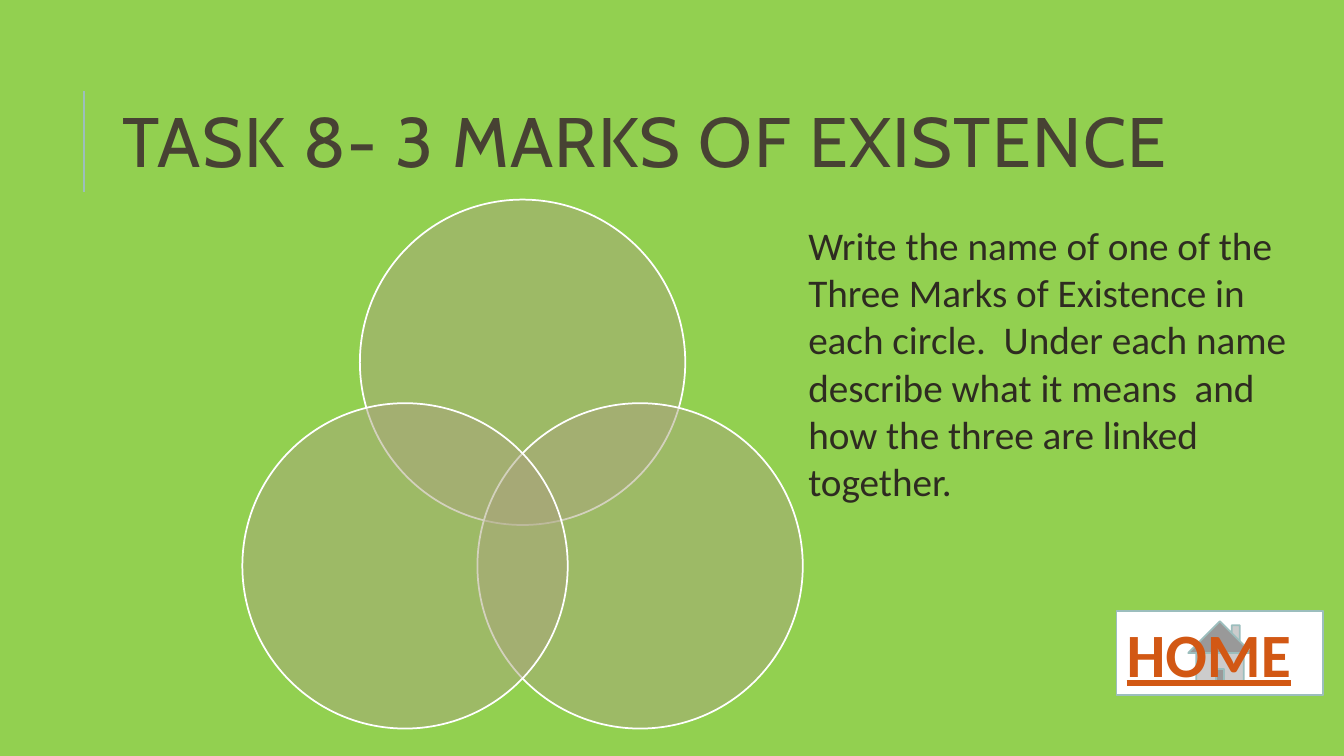
from math import cos, radians, sin

from lxml.etree import SubElement
from pptx import Presentation
from pptx.dml.color import RGBColor
from pptx.enum.shapes import MSO_CONNECTOR, MSO_SHAPE
from pptx.enum.text import MSO_ANCHOR, MSO_AUTO_SIZE, PP_ALIGN
from pptx.oxml.ns import qn
from pptx.util import Cm, Pt

TITLE = "TASK 8- 3 MARKS OF EXISTENCE"
INSTRUCTION = (
    "Write the name of one of the Three Marks of Existence in each circle.  "
    "Under each name describe what it means  and how the three are linked together."
)
HOME = "HOME"

COLOURS = {
    "background": "92D050",
    "accent": "9CBEBD",
    "button": "FFFFFF",
    "link": "D25814",
    "title": "474233",
    "body": "2E2B21",
    "circle": "A9A57C",
    "circle_edge": "FFFFFF",
}
FONTS = {
    "title": {"name": "Cabin", "size": Pt(50), "bold": False},
    "body": {"name": "Calibri", "size": Pt(28)},
    "link": {"name": "Calibri", "size": Pt(44), "bold": True, "underline": True},
}

# Boxes in centimetres: left, top, width, height
TITLE_BOX = (2.84, 1.63, 27, 4.17)
INSTRUCTION_BOX = (20.12, 5.46, 13.08, 7.44)
HOME_BOX = (28.14, 15.39, 5.21, 2.13)
RULE_X, RULE_TOP, RULE_BOTTOM = 2.11, 2.29, 4.83

# Three circles stand at equal angles around the middle of the diagram
VENN_CENTRE = (13.17, 12.55)
VENN_RING = 3.42
CIRCLE_SIZE = 8.2
CIRCLE_ANGLES = (-90, 30, 150)


def rgb(role):
    return RGBColor.from_string(COLOURS[role])


def lengths(box):
    return [Cm(value) for value in box]


def write(frame, text, role):
    """Fill a text frame with one left-aligned run in the role's font and colour."""
    frame.word_wrap = True
    paragraph = frame.paragraphs[0]
    paragraph.alignment = PP_ALIGN.LEFT
    run = paragraph.add_run()
    run.text = text
    for attribute, value in FONTS[role].items():
        setattr(run.font, attribute, value)
    run.font.color.rgb = rgb(role)
    return run


def add_filled(slide, preset, box, fill, edge):
    shape = slide.shapes.add_shape(preset, *lengths(box))
    shape.shadow.inherit = False
    shape.fill.solid()
    shape.fill.fore_color.rgb = rgb(fill)
    shape.line.color.rgb = rgb(edge)
    shape.line.width = Pt(1.25)
    return shape


def add_rule(slide):
    rule = slide.shapes.add_connector(
        MSO_CONNECTOR.STRAIGHT, *lengths((RULE_X, RULE_BOTTOM, RULE_X, RULE_TOP))
    )
    rule.line.color.rgb = rgb("accent")
    rule.line.width = Pt(1.5)
    SubElement(rule._element.spPr, qn("a:effectLst"))


def add_home_button(slide):
    button = add_filled(
        slide, MSO_SHAPE.ACTION_BUTTON_HOME, HOME_BOX, "button", "accent"
    )
    button.text_frame.vertical_anchor = MSO_ANCHOR.TOP
    properties = write(button.text_frame, HOME, "link").font._element
    outline = SubElement(properties, qn("a:ln"), w=str(Pt(1.75)))
    fill = SubElement(outline, qn("a:solidFill"))
    SubElement(fill, qn("a:srgbClr"), val=COLOURS["accent"])
    properties.insert(0, outline)


def add_title(slide):
    title = slide.shapes.title
    title.left, title.top, title.width, title.height = lengths(TITLE_BOX)
    frame = title.text_frame
    frame.auto_size = MSO_AUTO_SIZE.NONE
    frame.vertical_anchor = MSO_ANCHOR.MIDDLE
    frame.paragraphs[0].line_spacing = 0.8
    write(frame, TITLE, "title").font._element.set("spc", "100")


def add_venn(slide):
    centre_x, centre_y = VENN_CENTRE
    for angle in CIRCLE_ANGLES:
        left = centre_x + VENN_RING * cos(radians(angle)) - CIRCLE_SIZE / 2
        top = centre_y + VENN_RING * sin(radians(angle)) - CIRCLE_SIZE / 2
        box = (left, top, CIRCLE_SIZE, CIRCLE_SIZE)
        circle = add_filled(slide, MSO_SHAPE.OVAL, box, "circle", "circle_edge")
        colour = circle._element.spPr.find(qn("a:solidFill")).find(qn("a:srgbClr"))
        SubElement(colour, qn("a:alpha"), val="50000")


def add_instruction(slide):
    instruction = slide.shapes.add_textbox(*lengths(INSTRUCTION_BOX))
    write(instruction.text_frame, INSTRUCTION, "body")


def main():
    presentation = Presentation()
    presentation.slide_width, presentation.slide_height = Cm(33.87), Cm(19.05)
    slide = presentation.slides.add_slide(presentation.slide_layouts[5])
    slide.background.fill.solid()
    slide.background.fill.fore_color.rgb = rgb("background")
    for add_part in (add_rule, add_home_button, add_title, add_venn, add_instruction):
        add_part(slide)
    presentation.save("out.pptx")


if __name__ == "__main__":
    main()
